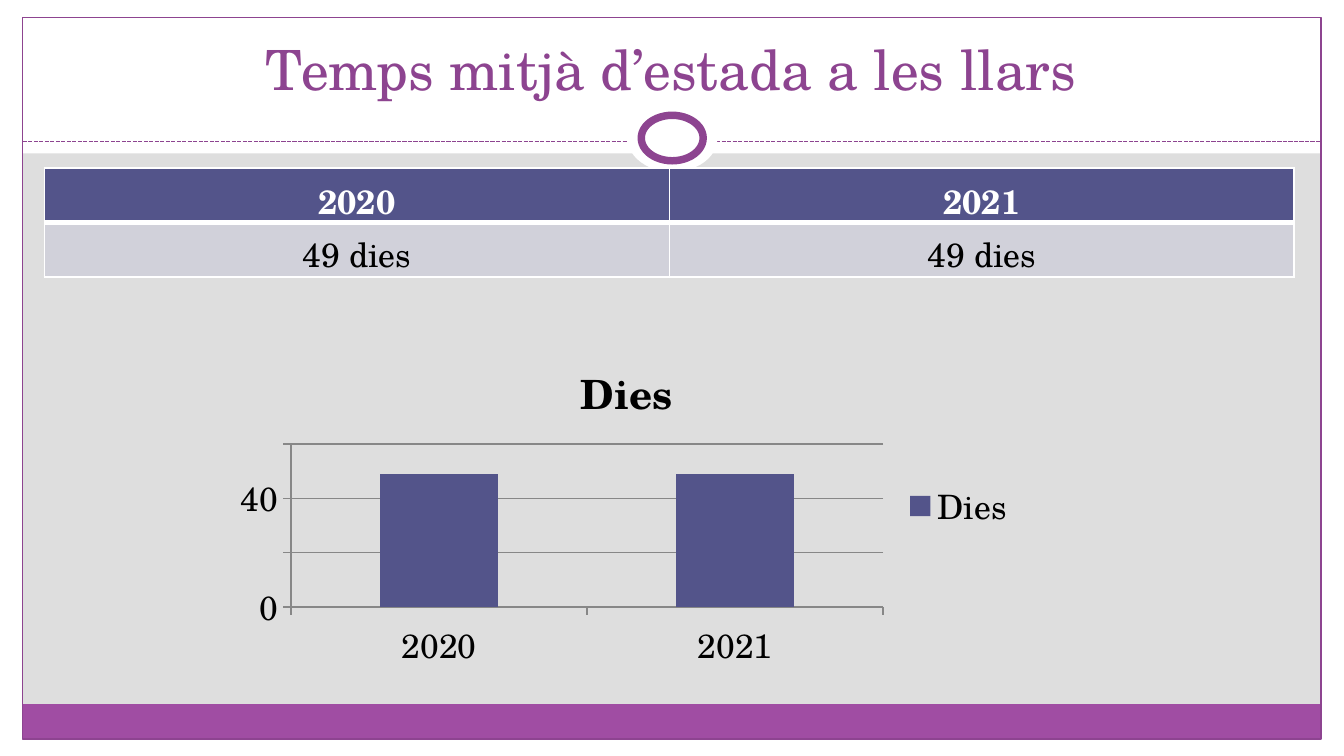
from dataclasses import dataclass

from lxml import etree
from pptx import Presentation
from pptx.chart.data import CategoryChartData
from pptx.dml.color import RGBColor
from pptx.enum.chart import XL_CHART_TYPE, XL_LEGEND_POSITION, XL_TICK_MARK
from pptx.enum.dml import MSO_LINE
from pptx.enum.shapes import MSO_CONNECTOR, MSO_SHAPE
from pptx.enum.text import MSO_ANCHOR, PP_ALIGN
from pptx.oxml.ns import qn
from pptx.util import Cm, Pt

RECT, OVAL = MSO_SHAPE.RECTANGLE, MSO_SHAPE.OVAL
STRAIGHT = MSO_CONNECTOR.STRAIGHT
DASH = MSO_LINE.SQUARE_DOT
CENTER = PP_ALIGN.CENTER
MIDDLE, BOTTOM = MSO_ANCHOR.MIDDLE, MSO_ANCHOR.BOTTOM
COLUMN = XL_CHART_TYPE.COLUMN_CLUSTERED
RIGHT = XL_LEGEND_POSITION.RIGHT
OUTSIDE = XL_TICK_MARK.OUTSIDE


@dataclass(frozen=True)
class Theme:
    font: str = "TeX Gyre Schola"
    back: str = "DEDEDE"
    white: str = "FFFFFF"
    black: str = "000000"
    purple: str = "8D4490"
    band: str = "A04DA3"
    indigo: str = "53548A"
    pale: str = "D1D1DA"
    axis: str = "878787"
    title: float = 29.7
    head: float = 21.6
    body: float = 18


def color(value):
    return RGBColor.from_string(value)


def assign(target, values):
    for name, value in values.items():
        setattr(target, name, value)


class Painter:
    def __init__(self, slide, theme):
        self.slide, self.theme = slide, theme
        self.shapes = slide.shapes
        self.paint(slide.background.fill, theme.back)

    def paint(self, fill, value):
        if value:
            fill.solid()
            fill.fore_color.rgb = color(value)
        else:
            fill.background()

    def style(self, font, size, value, bold=False):
        assign(font, {"name": self.theme.font, "size": Pt(size), "bold": bold})
        font.color.rgb = color(value)

    def stroke(self, line, value, width):
        self.paint(line.fill, value)
        line.width = Pt(width)

    def shape(self, kind, box, fill=None, line=None, width=0.75):
        item = self.shapes.add_shape(kind, *map(Cm, box))
        item.shadow.inherit = False
        self.paint(item.fill, fill)
        if line:
            self.stroke(item.line, line, width)
        else:
            item.line.fill.background()

    def rule(self, start, end):
        item = self.shapes.add_connector(STRAIGHT, *map(Cm, start + end))
        self.stroke(item.line, self.theme.purple, 0.75)
        item.line.dash_style = DASH
        etree.SubElement(item.element.spPr, qn("a:effectLst"))

    def label(self, frame, words, size, value, bold=False):
        part = frame.paragraphs[0]
        part.alignment = CENTER
        run = part.add_run()
        run.text = words
        self.style(run.font, size, value, bold)

    def title(self, box, words):
        frame = self.shapes.add_textbox(*map(Cm, box)).text_frame
        assign(frame, {"word_wrap": True, "vertical_anchor": BOTTOM})
        self.label(frame, words, self.theme.title, self.theme.purple)

    def border(self, cell, sides):
        props = cell._tc.get_or_add_tcPr()
        for side, width in sides.items():
            line = etree.SubElement(props, qn(f"a:ln{side}"), w=str(Pt(width)))
            fill = etree.SubElement(line, qn("a:solidFill"))
            etree.SubElement(fill, qn("a:srgbClr"), val=self.theme.white)

    def table(self, box, rows):
        look = self.theme
        styles = [
            (look.indigo, look.white, True, {"L": 1, "R": 1, "T": 1, "B": 3}),
            (look.pale, look.black, False, {"L": 1, "R": 1, "T": 3, "B": 1}),
        ]
        grid = self.shapes.add_table(len(rows), len(rows[0]), *map(Cm, box)).table
        for row, texts, (fill, ink, bold, sides) in zip(grid.rows, rows, styles):
            for cell, words in zip(row.cells, texts):
                self.border(cell, sides)
                self.paint(cell.fill, fill)
                cell.vertical_anchor = MIDDLE
                self.label(cell.text_frame, words, look.body, ink, bold)

    def chart(self, box, name, cats, values):
        look = self.theme
        data = CategoryChartData()
        data.categories = cats
        data.add_series(name, values)
        chart = self.shapes.add_chart(COLUMN, *map(Cm, box), data).chart
        self.style(chart.font, look.body, look.black)
        assign(chart, {"has_title": True, "has_legend": True})
        self.label(chart.chart_title.text_frame, name, look.head, look.black, True)
        assign(chart.legend, {"position": RIGHT, "include_in_layout": False})
        plot = chart.plots[0]
        assign(plot, {"gap_width": 150, "vary_by_categories": False})
        self.paint(plot.series[0].format.fill, look.indigo)
        scale = chart.value_axis
        assign(scale, {"minimum_scale": 0, "maximum_scale": 60, "major_unit": 20})
        for axis in (chart.category_axis, scale):
            axis.major_tick_mark = OUTSIDE
            self.stroke(axis.format.line, look.axis, 0.75)
        self.stroke(scale.major_gridlines.format.line, look.axis, 0.75)


def main():
    deck = Presentation()
    wide, high = 25.4, 14.29
    assign(deck, {"slide_width": Cm(wide), "slide_height": Cm(high)})
    look = Theme()
    pen = Painter(deck.slides.add_slide(deck.slide_layouts[6]), look)

    edge = 0.43
    inner = wide - 2 * edge
    margins = [
        (0, 13.97, wide, 0.32),
        (0, 0, wide, 2.9),
        (0, 0, edge, high),
        (wide - edge, 0, edge, high),
    ]
    for box in margins:
        pen.shape(RECT, box, look.white)
    pen.shape(RECT, (edge, 13.31, inner, 0.64), look.band)
    pen.shape(RECT, (edge, 0.33, inner, 13.64), line=look.purple)
    pen.rule((edge, 2.67), (wide - edge, 2.67))
    pen.shape(OVAL, (11.86, 1.98, 1.7, 1.27), look.white)
    pen.shape(OVAL, (12.12, 2.18, 1.17, 0.86), look.white, look.purple, 4)

    pen.title((0.84, 0.48, 23.7, 1.57), "Temps mitjà d’estada a les llars")
    years = ("2020", "2021")
    pen.table((0.84, 3.18, 23.62, 2.06), [years, ("49 dies", "49 dies")])
    pen.chart((4.24, 6.35, 15.21, 6.43), "Dies", years, (49, 49))
    deck.save("out.pptx")


if __name__ == "__main__":
    main()
